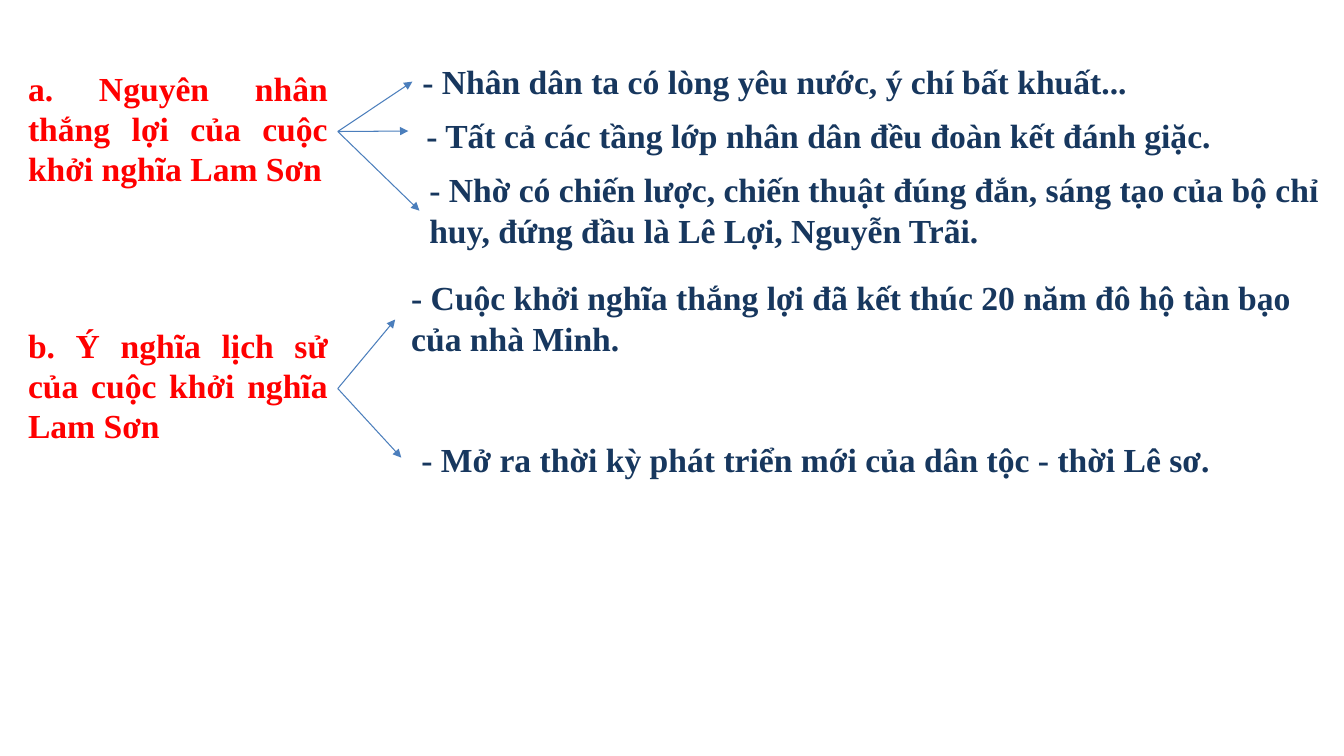
from dataclasses import dataclass

from lxml import etree
from pptx import Presentation
from pptx.dml.color import RGBColor
from pptx.enum.shapes import MSO_CONNECTOR
from pptx.enum.text import PP_ALIGN
from pptx.oxml import parse_xml
from pptx.oxml.ns import nsdecls, qn
from pptx.slide import Slide
from pptx.util import Inches, Pt

STRAIGHT = MSO_CONNECTOR.STRAIGHT
LEFT, JUSTIFY = PP_ALIGN.LEFT, PP_ALIGN.JUSTIFY


@dataclass(frozen=True)
class Theme:
    font: str = "Times New Roman"
    size: float = 24
    head: str = "FF0000"
    body: str = "17375E"
    line: str = "4B7EBC"
    weight: float = 0.75


@dataclass(frozen=True)
class Point:
    text: str
    box: tuple[float, float, float, float]
    tip: tuple[float, float]


@dataclass(frozen=True)
class Branch:
    title: str
    top: float
    points: tuple[Point, ...]


THEME = Theme()
HEAD_X, HEAD_W, HEAD_H = 0.18, 3.17, 1.37

BRANCHES = (
    Branch("a. Nguyên nhân thắng lợi của cuộc khởi nghĩa Lam Sơn", 0.62, (
        Point("- Nhân dân ta có lòng yêu nước, ý chí bất khuất...",
              (4.09, 0.56, 8.79, 0.5), (4.09, 0.81)),
        Point("- Tất cả các tầng lớp nhân dân đều đoàn kết đánh giặc.",
              (4.13, 1.09, 8.06, 0.5), (4.05, 1.3)),
        Point("- Nhờ có chiến lược, chiến thuật đúng đắn, sáng tạo của bộ chỉ "
              "huy, đứng đầu là Lê Lợi, Nguyễn Trãi.",
              (4.16, 1.63, 9.03, 0.91), (4.16, 2.09)),
    )),
    Branch("b. Ý nghĩa lịch sử của cuộc khởi nghĩa Lam Sơn", 3.17, (
        Point("- Cuộc khởi nghĩa thắng lợi đã kết thúc 20 năm đô hộ tàn bạo "
              "của nhà Minh.",
              (3.98, 2.7, 9.2, 0.91), (3.92, 3.17)),
        Point("- Mở ra thời kỳ phát triển mới của dân tộc - thời Lê sơ.",
              (4.08, 4.31, 8.09, 0.5), (3.98, 4.54)),
    )),
)


def add_text(slide: Slide, text: str, box: tuple[float, float, float, float],
             color: str, align: PP_ALIGN, glow: bool = False) -> None:
    frame = slide.shapes.add_textbox(*map(Inches, box)).text_frame
    frame.word_wrap = True
    frame.text = text
    para = frame.paragraphs[0]
    para.alignment = align
    font = para.runs[0].font
    font.name, font.size, font.bold = THEME.font, Pt(THEME.size), True
    font.color.rgb = RGBColor.from_string(color)
    if glow:
        # Soft shadow behind the letters, placed right after the fill
        fill = para.runs[0].font._element.find(qn("a:solidFill"))
        fill.addnext(parse_xml(
            f'<a:effectLst {nsdecls("a")}>'
            '<a:outerShdw blurRad="38100" dist="38100" dir="2700000">'
            '<a:srgbClr val="000000"><a:alpha val="43000"/></a:srgbClr>'
            '</a:outerShdw></a:effectLst>'))


def add_arrow(slide: Slide, start: tuple[float, float],
              tip: tuple[float, float]) -> None:
    arrow = slide.shapes.add_connector(STRAIGHT, *map(Inches, start + tip))
    arrow.line.color.rgb = RGBColor.from_string(THEME.line)
    arrow.line.width = Pt(THEME.weight)
    etree.SubElement(arrow.line._get_or_add_ln(), qn("a:tailEnd"),
                     type="triangle")
    etree.SubElement(arrow._element.spPr, qn("a:effectLst"))


def add_branch(slide: Slide, branch: Branch) -> None:
    # Heading on the left
    add_text(slide, branch.title, (HEAD_X, branch.top, HEAD_W, HEAD_H),
             THEME.head, JUSTIFY, glow=True)
    # Arrows fan out from the middle of its right side
    root = (HEAD_X + HEAD_W, branch.top + HEAD_H / 2)
    for point in branch.points:
        add_arrow(slide, root, point.tip)
        add_text(slide, point.text, point.box, THEME.body, LEFT)


def main() -> None:
    deck = Presentation()
    deck.slide_width, deck.slide_height = Inches(13.33), Inches(7.5)
    slide = deck.slides.add_slide(deck.slide_layouts[6])
    for branch in BRANCHES:
        add_branch(slide, branch)
    deck.save("out.pptx")


if __name__ == "__main__":
    main()
